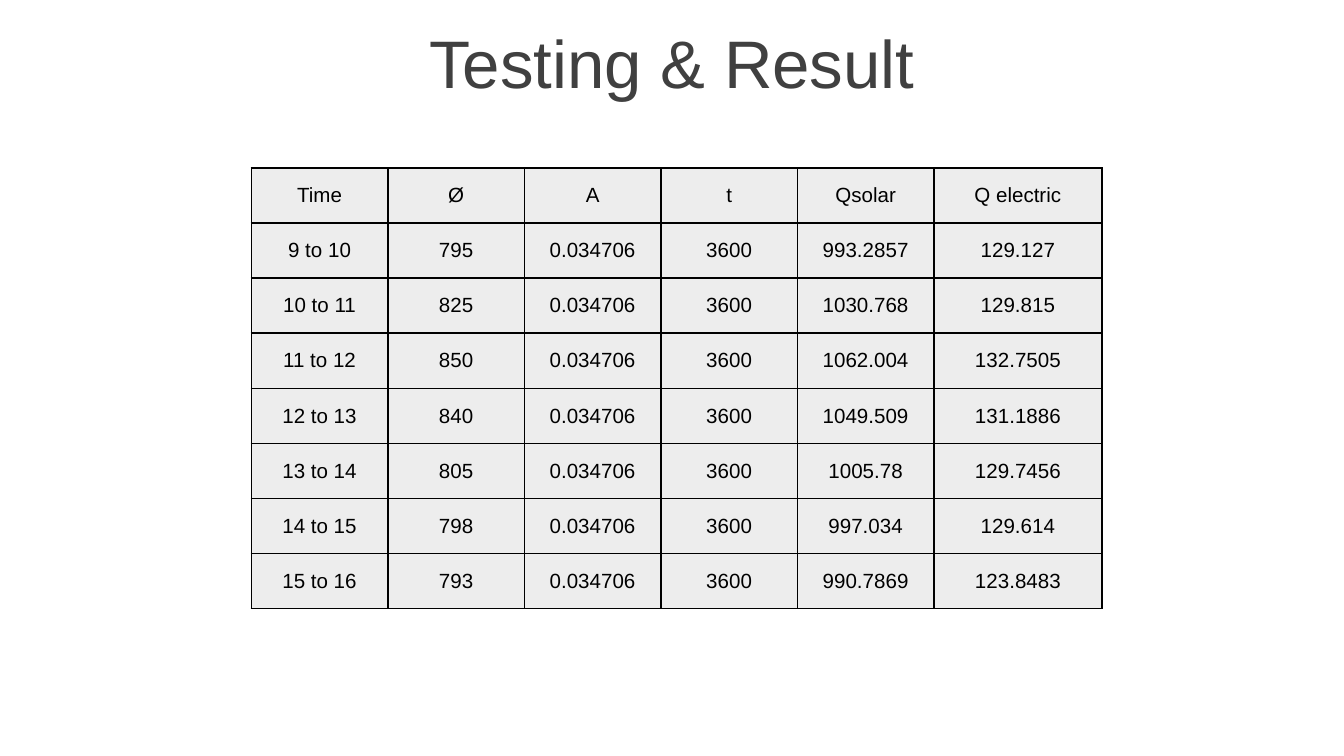
from lxml.etree import SubElement
from pptx import Presentation
from pptx.dml.color import RGBColor
from pptx.enum.text import MSO_ANCHOR, PP_ALIGN
from pptx.oxml.ns import qn
from pptx.util import Inches, Pt

FONT = "Arial"
BLACK, TITLE_GREY, CELL_GREY = "000000", "404040", "EDEDED"

# Table grid, in inches: equal columns and a wider last one
TABLE_LEFT, TABLE_TOP = 1.87, 1.25
TABLE_WIDTH, TABLE_HEIGHT = 6.33, 3.28
LAST_COLUMN = 1.25

# The area and the duration are the same in every test
AREA, DURATION = "0.034706", "3600"
HEADINGS = ["Time", "Ø", "A", "t", "Qsolar", "Q electric"]
FIRST_HOUR = 9
READINGS = [  # irradiance, solar heat, electric heat
    ("795", "993.2857", "129.127"),
    ("825", "1030.768", "129.815"),
    ("850", "1062.004", "132.7505"),
    ("840", "1049.509", "131.1886"),
    ("805", "1005.78", "129.7456"),
    ("798", "997.034", "129.614"),
    ("793", "990.7869", "123.8483"),
]


def color(value):
    return RGBColor.from_string(value)


def write_centered(text_frame, text, size, font_color):
    paragraph = text_frame.paragraphs[0]
    paragraph.alignment = PP_ALIGN.CENTER
    run = paragraph.add_run()
    run.text = text
    run.font.name = FONT
    run.font.size = Pt(size)
    run.font.color.rgb = color(font_color)


def add_title(slide, text, width):
    title = slide.shapes.title
    title.left, title.top = 0, Inches(0.14)
    title.width, title.height = width, Inches(0.63)
    title.text_frame.vertical_anchor = MSO_ANCHOR.MIDDLE
    write_centered(title.text_frame, text, 36, TITLE_GREY)


def add_borders(cell, line_color, width):
    properties = cell._tc.get_or_add_tcPr()
    for side in ("lnL", "lnR", "lnT", "lnB"):
        line = SubElement(properties, qn(f"a:{side}"), w=str(Pt(width)))
        fill = SubElement(line, qn("a:solidFill"))
        SubElement(fill, qn("a:srgbClr"), val=line_color)


def format_cell(cell, text):
    cell.margin_left = cell.margin_right = 0
    cell.margin_top = cell.margin_bottom = 0
    cell.vertical_anchor = MSO_ANCHOR.MIDDLE
    # Borders must come before the fill in the cell properties
    add_borders(cell, BLACK, 1)
    cell.fill.solid()
    cell.fill.fore_color.rgb = color(CELL_GREY)
    write_centered(cell.text_frame, text, 11, BLACK)


def add_results_table(slide, rows):
    column_count = len(rows[0])
    equal_width = (TABLE_WIDTH - LAST_COLUMN) / (column_count - 1)
    widths = [equal_width] * (column_count - 1) + [LAST_COLUMN]
    frame = slide.shapes.add_table(
        len(rows), column_count,
        Inches(TABLE_LEFT), Inches(TABLE_TOP),
        Inches(TABLE_WIDTH), Inches(TABLE_HEIGHT))
    table = frame.table
    table.first_row = table.horz_banding = False
    for column, width in zip(table.columns, widths):
        column.width = Inches(width)
    for row, texts in zip(table.rows, rows):
        row.height = Inches(TABLE_HEIGHT / len(rows))
        for cell, text in zip(row.cells, texts):
            format_cell(cell, text)


def main():
    # Widescreen slide, 16 to 9
    presentation = Presentation()
    presentation.slide_width = Inches(10)
    presentation.slide_height = Inches(10 * 9 / 16)
    slide = presentation.slides.add_slide(presentation.slide_layouts[5])

    add_title(slide, "Testing & Result", presentation.slide_width)

    # One row for each hour of testing
    rows = [HEADINGS]
    for hour, (irradiance, solar, electric) in enumerate(READINGS, FIRST_HOUR):
        rows.append([f"{hour} to {hour + 1}", irradiance, AREA, DURATION,
                     solar, electric])
    add_results_table(slide, rows)

    presentation.save("out.pptx")


if __name__ == "__main__":
    main()
